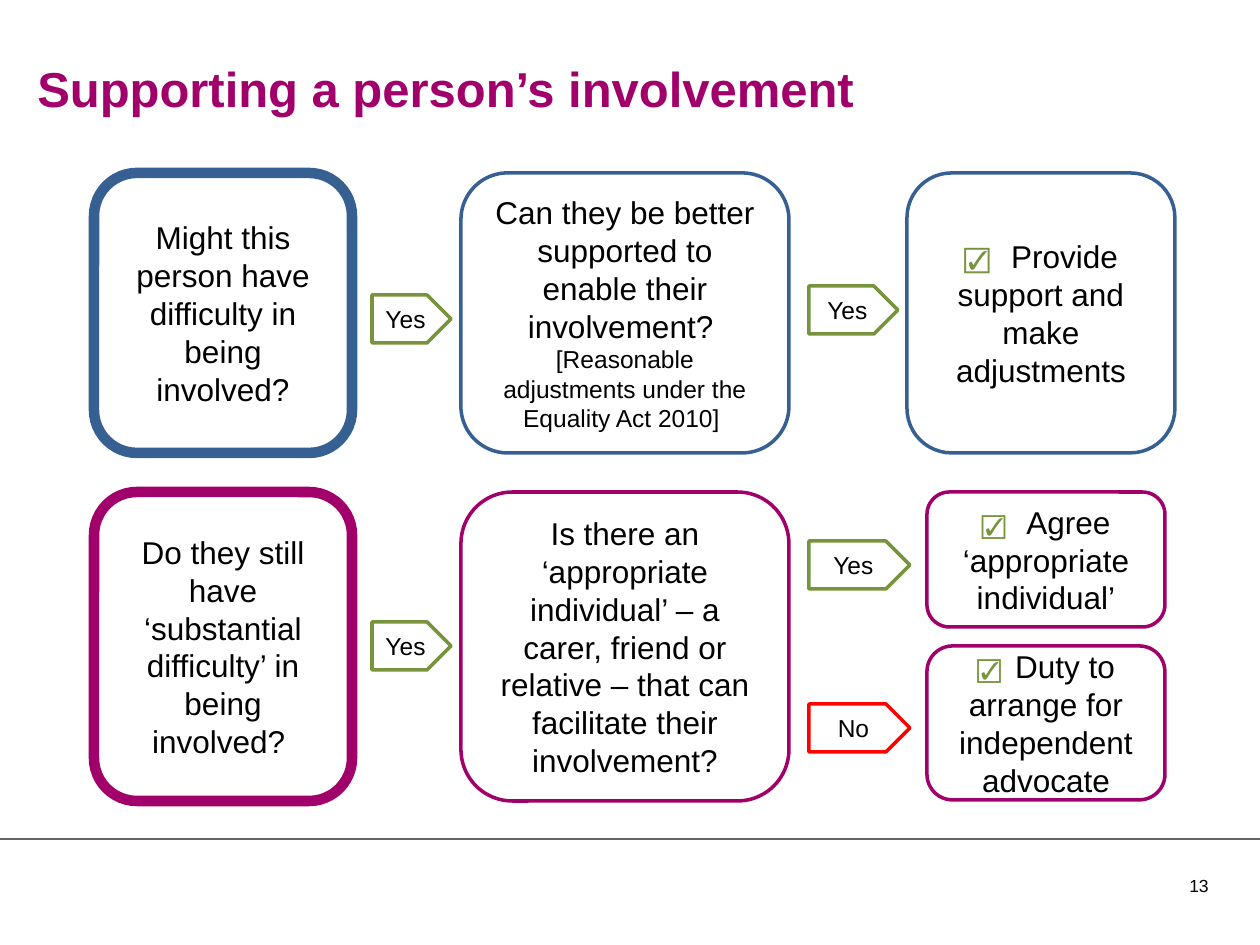
"""Build the slide on supporting a person's involvement."""
from pptx import Presentation
from pptx.dml.color import RGBColor
from pptx.enum.shapes import MSO_CONNECTOR, MSO_SHAPE
from pptx.enum.text import MSO_ANCHOR, PP_ALIGN
from pptx.oxml.ns import qn
from pptx.util import Pt
from lxml import etree

PX = 914400 // 126
PLUM, BLUE, GREEN, RED = "A1006B", "376092", "77933C", "FF0000"
BLACK, WHITE, GREY = "000000", "FFFFFF", "666666"


def color(code):
    return RGBColor.from_string(code)


def write(frame, paras, align, anchor):
    frame.word_wrap = True
    frame.vertical_anchor = anchor
    for i, runs in enumerate(paras):
        para = frame.paragraphs[0] if i == 0 else frame.add_paragraph()
        para.alignment = align
        for text, size, code, bold, gap in runs:
            run = para.add_run()
            run.text = text
            style = {"name": "Arial", "size": Pt(size), "bold": bold}
            for key, value in style.items():
                setattr(run.font, key, value)
            run.font.color.rgb = color(code)
            if gap:
                run.font._element.set("spc", str(gap))


deck = Presentation()
deck.slide_width, deck.slide_height = 1260 * PX, 945 * PX
slide = deck.slides.add_slide(deck.slide_layouts[6])
shapes = slide.shapes

rule = shapes.add_connector(MSO_CONNECTOR.STRAIGHT, 0, 839 * PX, 1260 * PX, 839 * PX)
rule.line.color.rgb = color(GREY)
rule.line.width = Pt(0.75)
etree.SubElement(rule._element.spPr, qn("a:effectLst"))

labels = [
    (25, 52, 873, 132, "Supporting a person’s involvement", 28, PLUM, True, PP_ALIGN.LEFT),
    (1166, 869, 55, 50, "13", 10, BLACK, False, PP_ALIGN.RIGHT),
]
for x, y, w, h, text, size, code, bold, align in labels:
    box = shapes.add_textbox(x * PX, y * PX, w * PX, h * PX)
    write(box.text_frame, [[(text, size, code, bold, 0)]], align, MSO_ANCHOR.TOP)

LEFT, MID, RIGHT = (94, 258), (461, 328), (927, 238)
TOP, LOW = (173, 280), (492, 309)
cards = [
    (LEFT, TOP, BLUE, 6, None, ["Might this person have difficulty in being involved?"]),
    (MID, TOP, BLUE, 2, None, ["Can they be better supported to enable their involvement? ",
                               "[Reasonable adjustments under the Equality Act 2010] "]),
    ((907, 268), TOP, BLUE, 2, (15, 390), ["Provide support and make adjustments"]),
    (LEFT, LOW, PLUM, 6, None,
     ["Do they still have ‘substantial difficulty’ in being involved? "]),
    (MID, LOW, PLUM, 2, None,
     ["Is there an ‘appropriate individual’ – a carer, friend or relative – "
      "that can facilitate their involvement?"]),
    (RIGHT, (492, 135), PLUM, 2, (14, 390), ["Agree ‘appropriate individual’"]),
    (RIGHT, (646, 154), PLUM, 2, (14, 195),
     ["Duty to arrange for independent advocate"]),
]
items = []
for across, down, code, width, tick, texts in cards:
    paras = [[(text, size, BLACK, False, 0)] for text, size in zip(texts, (18, 14))]
    if tick:
        paras[0].insert(0, ("☑ ", tick[0], GREEN, True, tick[1]))
    items.append((MSO_SHAPE.ROUNDED_RECTANGLE, across, down, code, width, paras))

tags = [
    (372, 295, 79, "Yes", GREEN), (809, 286, 89, "Yes", GREEN),
    (372, 622, 79, "Yes", GREEN), (809, 541, 101, "Yes", GREEN),
    (809, 704, 101, "No", RED),
]
for x, y, w, text, code in tags:
    paras = [[(text, 14, BLACK, False, 0)]]
    items.append((MSO_SHAPE.PENTAGON, (x, w), (y, 48), code, 2, paras))

for kind, (x, w), (y, h), code, width, paras in items:
    shape = shapes.add_shape(kind, x * PX, y * PX, w * PX, h * PX)
    shape.shadow.inherit = False
    if kind == MSO_SHAPE.PENTAGON:
        shape.fill.background()
    else:
        shape.fill.solid()
        shape.fill.fore_color.rgb = color(WHITE)
    shape.line.color.rgb = color(code)
    shape.line.width = Pt(width)
    write(shape.text_frame, paras, PP_ALIGN.CENTER, MSO_ANCHOR.MIDDLE)

deck.save("out.pptx")
